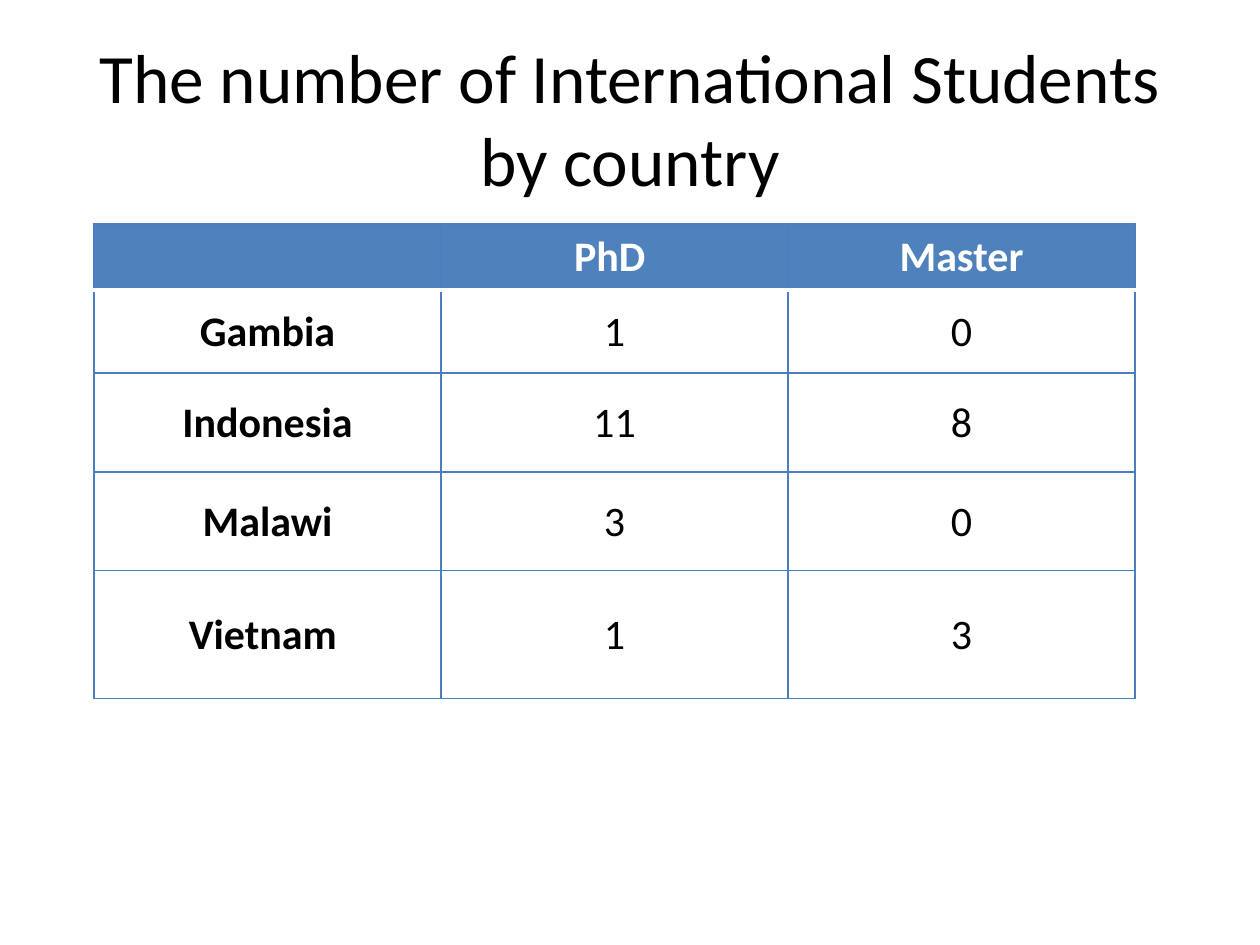
from lxml import etree
from pptx import Presentation
from pptx import util as u
from pptx.dml.color import RGBColor
from pptx.enum import text
from pptx.oxml import ns

EMU_PER_PX = 914400 / 126
COLORS = {"text": "000000", "paper": "FFFFFF", "header": "4F81BD", "grid": "4B7EBC"}
TITLE = "The number of International Students by country"
STUDENTS = [
    ["", "PhD ", "Master"],
    ["Gambia", "1", "0"],
    ["Indonesia", "11", "8"],
    ["Malawi", "3", "0"],
    ["Vietnam ", "1", "3"],
]
ROW_HEIGHTS = [66, 83, 99, 99, 128]


def px(n):
    return u.Emu(round(n * EMU_PER_PX))


def rgb(name):
    return RGBColor.from_string(COLORS[name])


class Deck:
    """Holds the text style and the current slide."""

    font = "Calibri"

    def __init__(self, prs):
        self.slide = prs.slides.add_slide(prs.slide_layouts[5])

    def set_text(self, tf, content, size, color="text", bold=False):
        tf.text = content
        tf.vertical_anchor = text.MSO_ANCHOR.MIDDLE
        p = tf.paragraphs[0]
        p.alignment = text.PP_ALIGN.CENTER
        for r in p.runs:
            r.font.name, r.font.size, r.font.bold = self.font, u.Pt(size), bold
            r.font.color.rgb = rgb(color)

    def title(self, content, left, top, width, height):
        sp = self.slide.shapes.title
        sp.left, sp.top, sp.width, sp.height = map(px, (left, top, width, height))
        self.set_text(sp.text_frame, content, 39.6)

    def border(self, cell, side, color, width):
        ln = etree.SubElement(cell._tc.get_or_add_tcPr(), ns.qn(f"a:ln{side}"),
                              w=str(int(u.Pt(width))))
        fill = etree.SubElement(ln, ns.qn("a:solidFill"))
        etree.SubElement(fill, ns.qn("a:srgbClr"), val=COLORS[color])

    def cell(self, cell, content, row, col):
        header = row == 0
        cell.margin_left = cell.margin_right = cell.margin_top = px(1)
        cell.margin_bottom = 0
        self.set_text(cell.text_frame, content, 24, "paper" if header else "text",
                      bold=header or col == 0)
        cell.vertical_anchor = text.MSO_ANCHOR.MIDDLE
        for side in "LRTB":
            under_header = (row, side) in ((0, "B"), (1, "T"))
            self.border(cell, side, *(("paper", 2) if under_header else ("grid", 0.75)))
        cell.fill.solid()
        cell.fill.fore_color.rgb = rgb("header" if header else "paper")

    def table(self, rows, left, top, col_width, heights):
        cols = len(rows[0])
        frame = self.slide.shapes.add_table(
            len(rows), cols, px(left), px(top), px(col_width * cols), px(sum(heights)))
        table = frame.table
        table.horz_banding = False
        for column in table.columns:
            column.width = px(col_width)
        for i, (values, height) in enumerate(zip(rows, heights)):
            table.rows[i].height = px(height)
            for j, value in enumerate(values):
                self.cell(table.cell(i, j), value, i, j)


def main():
    prs = Presentation()
    prs.slide_width, prs.slide_height = px(1260), px(945)
    deck = Deck(prs)
    deck.title(TITLE, 63, 38, 1134, 158)
    deck.table(STUDENTS, 94, 224, 347, ROW_HEIGHTS)
    prs.save("out.pptx")


if __name__ == "__main__":
    main()
